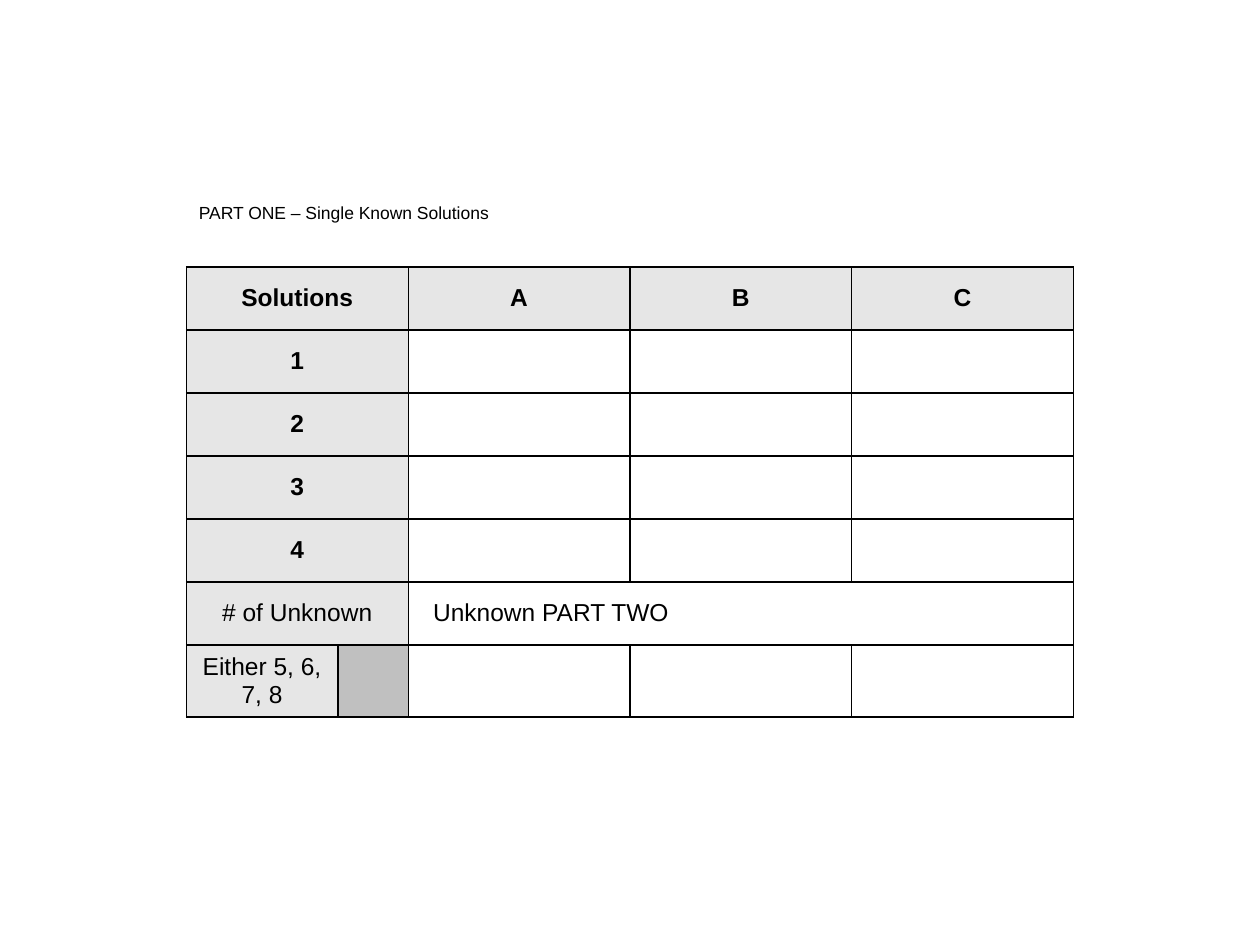
from dataclasses import dataclass

from lxml import etree
from pptx import Presentation
from pptx.dml.color import RGBColor
from pptx.enum.text import MSO_ANCHOR, PP_ALIGN
from pptx.oxml.ns import qn
from pptx.util import Cm, Pt

MIDDLE = MSO_ANCHOR.MIDDLE
CENTER = PP_ALIGN.CENTER
LEFT = PP_ALIGN.LEFT
FONT = "Arial"
BLACK = "000000"
PALE = "E6E6E6"
GREY = "C0C0C0"
WIDTHS = (3.05, 1.42, 4.47, 4.47, 4.47)
HEIGHTS = (1.27,) * 6 + (1.45,)
EDGES = ("a:lnL", "a:lnR", "a:lnT", "a:lnB")


@dataclass
class Entry:
    """Hold the content and look of one table cell."""
    row: int
    col: int
    text: str = ""
    span: int = 1
    bold: bool = False
    fill: str = PALE
    align: PP_ALIGN = CENTER
    inset: float = 0.25


ENTRIES = [
    Entry(0, 0, "Solutions", span=2, bold=True),
    *(Entry(0, col, name, bold=True) for col, name in enumerate("ABC", 2)),
    *(Entry(row, 0, str(row), span=2, bold=True) for row in range(1, 5)),
    Entry(5, 0, "# of Unknown", span=2),
    Entry(5, 2, "Unknown PART TWO", span=3, fill="", align=LEFT, inset=0.5),
    Entry(6, 0, "Either 5, 6, 7, 8"),
    Entry(6, 1, fill=GREY),
]


def color(code: str) -> RGBColor:
    """Turn a hex string into a colour."""
    return RGBColor.from_string(code)


def write(para, text: str, size: int, bold: bool = False) -> None:
    """Add one styled run to a paragraph."""
    run = para.add_run()
    run.text = text
    run.font.name = FONT
    run.font.size = Pt(size)
    run.font.bold = bold
    run.font.color.rgb = color(BLACK)


def border(cell) -> None:
    """Draw a thin black line on each side of a cell."""
    props = cell._tc.get_or_add_tcPr()
    for edge in EDGES:
        line = etree.SubElement(props, qn(edge), w=str(Pt(1)))
        solid = etree.SubElement(line, qn("a:solidFill"))
        etree.SubElement(solid, qn("a:srgbClr"), val=BLACK)


def fill_cell(table, entry: Entry) -> None:
    """Merge, paint and label the cell of one entry."""
    cell = table.cell(entry.row, entry.col)
    if entry.span > 1:
        cell.merge(table.cell(entry.row, entry.col + entry.span - 1))
    if entry.fill:
        cell.fill.solid()
        cell.fill.fore_color.rgb = color(entry.fill)
    if entry.text:
        cell.vertical_anchor = MIDDLE
        cell.margin_left = Cm(entry.inset)
        para = cell.text_frame.paragraphs[0]
        para.alignment = entry.align
        write(para, entry.text, 14, entry.bold)


def add_title(slide) -> None:
    """Add the heading above the table."""
    box = slide.shapes.add_textbox(Cm(3.76), Cm(3.94), Cm(6.38), Cm(1.45))
    box.text_frame.word_wrap = False
    write(box.text_frame.paragraphs[0], "PART ONE – Single Known Solutions", 10)


def add_grid(slide) -> None:
    """Add the table of solutions."""
    frame = slide.shapes.add_table(
        len(HEIGHTS), len(WIDTHS), Cm(3.76), Cm(5.38),
        Cm(sum(WIDTHS)), Cm(sum(HEIGHTS)))
    table = frame.table
    table.first_row = False
    table.horz_banding = False
    for col, width in zip(table.columns, WIDTHS):
        col.width = Cm(width)
    for row, height in zip(table.rows, HEIGHTS):
        row.height = Cm(height)
    for cell in table.iter_cells():
        border(cell)
        cell.fill.background()
    for entry in ENTRIES:
        fill_cell(table, entry)


def main() -> None:
    """Build the slide and save it."""
    deck = Presentation()
    deck.slide_width = Cm(25.4)
    deck.slide_height = Cm(19.05)
    slide = deck.slides.add_slide(deck.slide_layouts[6])
    add_title(slide)
    add_grid(slide)
    deck.save("out.pptx")


if __name__ == "__main__":
    main()
